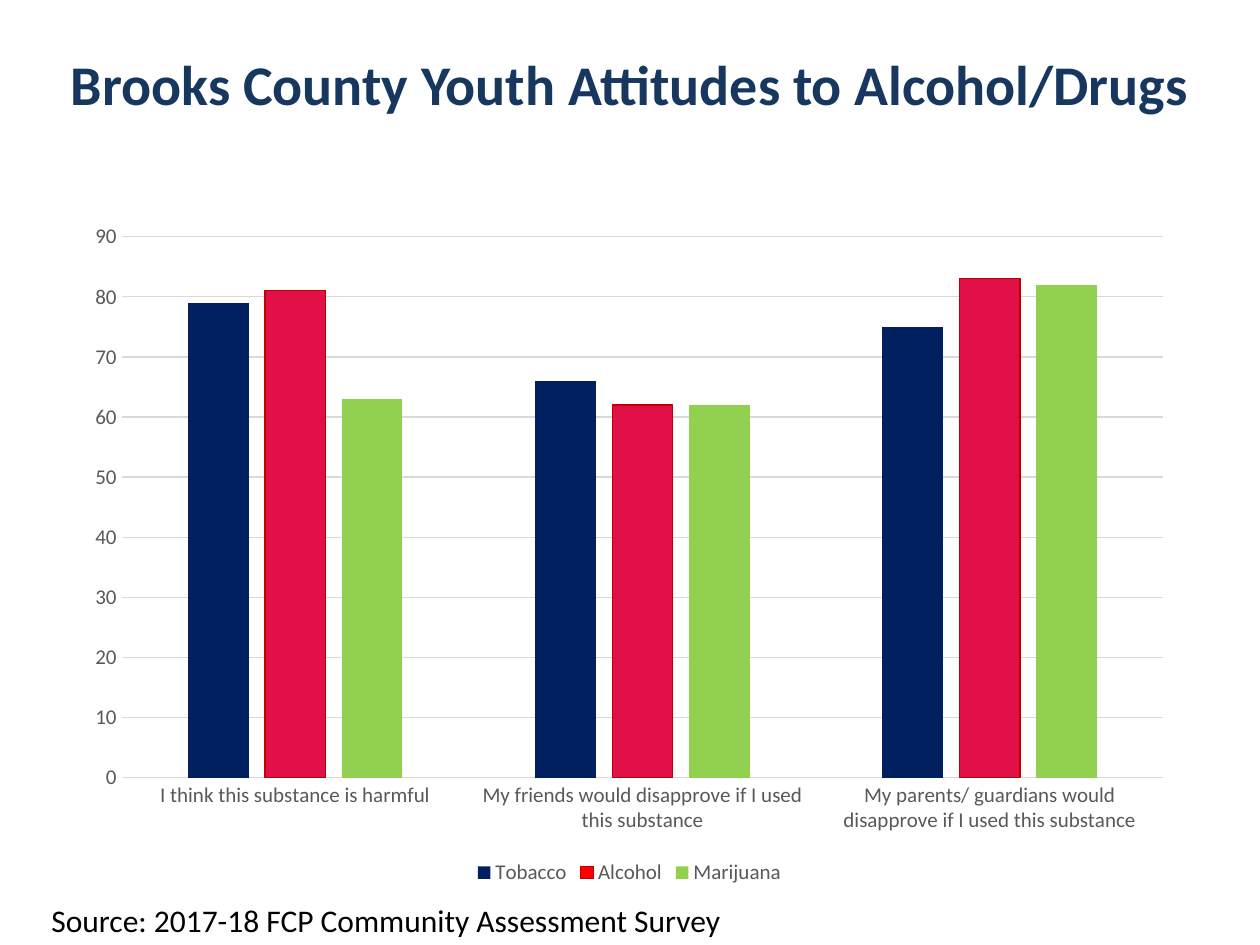
from pptx import Presentation
from pptx import util as u
from pptx.chart.data import CategoryChartData
from pptx.dml.color import RGBColor
from pptx.enum import chart as ch, text

WIDTH, HEIGHT = 10, 7.5
GREY, RULE = "595959", "D9D9D9"

QUESTIONS = [
    "I think this substance is harmful",
    "My friends would disapprove if I used this substance",
    "My parents/ guardians would disapprove if I used this substance",
]
# name, values, series fill, bar fill, outline
SUBSTANCES = [
    ("Tobacco", (79, 66, 75), "002060", None, None),
    ("Alcohol", (81, 62, 83), "FF0000", "E11148", "C00000"),
    ("Marijuana", (63, 62, 82), "92D050", None, None),
]


def color(hex_value):
    return RGBColor.from_string(hex_value)


def assign(target, values):
    for name, value in values.items():
        setattr(target, name, value)


def paint(fmt, fill, outline):
    fmt.fill.solid()
    fmt.fill.fore_color.rgb = color(fill)
    if outline:
        rule(fmt.line, outline)
    else:
        fmt.line.fill.background()


def rule(line, hex_value):
    line.color.rgb = color(hex_value)
    line.width = u.Pt(0.75)


class Deck:
    """Holds the style and the current slide; boxes are shares of the slide."""

    face = "Calibri"

    def __init__(self):
        self.prs = Presentation()
        self.prs.slide_width = u.Inches(WIDTH)
        self.prs.slide_height = u.Inches(HEIGHT)
        self.slide = self.prs.slides.add_slide(self.prs.slide_layouts[5])

    def box(self, left, top, width, height):
        w, h = self.prs.slide_width, self.prs.slide_height
        return [int(v) for v in (left * w, top * h, width * w, height * h)]

    def font(self, font, size, hex_value, bold=False):
        assign(font, {"name": self.face, "size": u.Pt(size), "bold": bold})
        font.color.rgb = color(hex_value)

    def title(self, words, share):
        heading = self.slide.shapes.title
        assign(heading, dict(zip(("left", "top", "width", "height"), self.box(*share))))
        heading.text_frame.text = words
        heading.text_frame.vertical_anchor = text.MSO_ANCHOR.MIDDLE
        line = heading.text_frame.paragraphs[0]
        line.alignment = text.PP_ALIGN.CENTER
        self.font(line.runs[0].font, 32, "17375E", bold=True)

    def note(self, words, share):
        frame = self.slide.shapes.add_textbox(*self.box(*share)).text_frame
        assign(frame, {"text": words, "word_wrap": False,
                       "auto_size": text.MSO_AUTO_SIZE.SHAPE_TO_FIT_TEXT})
        self.font(frame.paragraphs[0].runs[0].font, 18, "000000")

    def columns(self, categories, rows, share):
        data = CategoryChartData()
        data.categories = categories
        for name, values, *_ in rows:
            data.add_series(name, values)
        chart = self.slide.shapes.add_chart(
            ch.XL_CHART_TYPE.COLUMN_CLUSTERED, *self.box(*share), data).chart
        assign(chart, {"has_title": False, "has_legend": True})
        self.font(chart.font, 10, "000000")

        # Legend
        assign(chart.legend, {"position": ch.XL_LEGEND_POSITION.BOTTOM,
                              "include_in_layout": False})
        self.font(chart.legend.font, 12, GREY)

        # Axes
        for axis in (chart.category_axis, chart.value_axis):
            assign(axis, {"major_tick_mark": ch.XL_TICK_MARK.NONE,
                          "minor_tick_mark": ch.XL_TICK_MARK.NONE})
            self.font(axis.tick_labels.font, 12, GREY)
        rule(chart.category_axis.format.line, RULE)
        assign(chart.value_axis, {"minimum_scale": 0, "maximum_scale": 90,
                                  "major_unit": 10})
        chart.value_axis.format.line.fill.background()
        rule(chart.value_axis.major_gridlines.format.line, RULE)

        # Columns
        plot = chart.plots[0]
        assign(plot, {"gap_width": 219, "overlap": -27, "vary_by_categories": False})
        for series, (_, values, fill, bar_fill, outline) in zip(plot.series, rows):
            paint(series.format, fill, outline)
            if bar_fill:
                for i in range(len(values)):
                    paint(series.points[i].format, bar_fill, outline)

    def save(self):
        self.prs.save("out.pptx")


def main():
    deck = Deck()
    deck.title("Brooks County Youth Attitudes to Alcohol/Drugs", (0, 0.004, 1, 0.167))
    deck.columns(QUESTIONS, SUBSTANCES, (0.058, 0.223, 0.883, 0.719))
    deck.note("Source: 2017-18 FCP Community Assessment Survey", (0.031, 0.947, 0.557, 0.053))
    deck.save()


if __name__ == "__main__":
    main()
